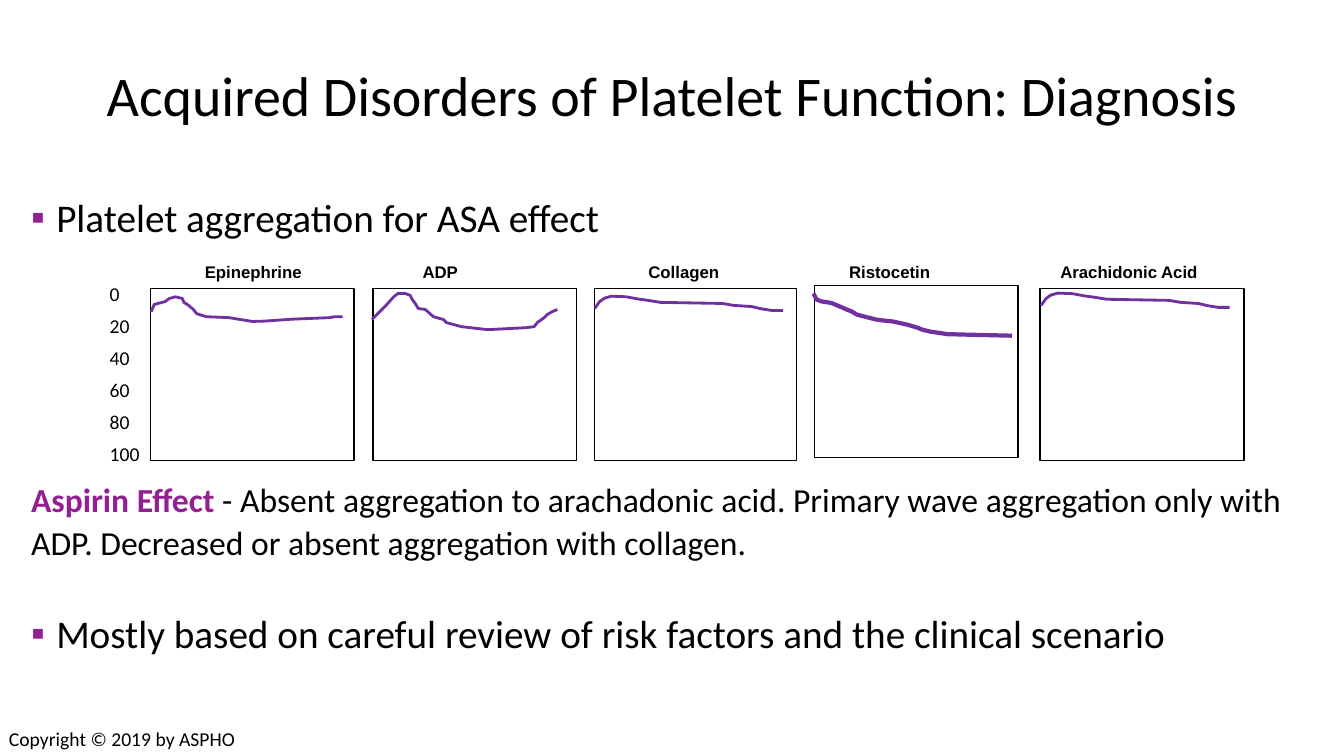
import pptx
import pptx.util
import pptx.dml.color
import pptx.enum.shapes
import pptx.enum.text
from lxml import etree

Pt = pptx.util.Pt
Align = pptx.enum.text.PP_ALIGN
Anchor = pptx.enum.text.MSO_ANCHOR

theme = {
    "black": "000000", "plum": "932092", "trace": "7030A0",
    "title": 40, "point": 28, "note": 24, "small": 14, "label": 12,
    "font": "Calibri", "head": "Arial",
}


def paint(color, name):
    color.rgb = pptx.dml.color.RGBColor.from_string(theme[name])


def write(para, text, size, color="black", bold=False, font="font"):
    run = para.add_run()
    run.text = text
    run.font.size = Pt(theme[size])
    run.font.name = theme[font]
    run.font.bold = bold
    paint(run.font.color, color)


deck = pptx.Presentation()
deck.slide_width, deck.slide_height = Pt(960), Pt(540)
slide = deck.slides.add_slide(deck.slide_layouts[5])
shapes = slide.shapes

# Title
title = shapes.title
title.left, title.top, title.width, title.height = Pt(0), Pt(0), Pt(960), Pt(129.6)
title.text_frame.auto_size = pptx.enum.text.MSO_AUTO_SIZE.NONE
title.text_frame.vertical_anchor = Anchor.MIDDLE
para = title.text_frame.paragraphs[0]
para.alignment = Align.CENTER
para.line_spacing = 1.1
write(para, "Acquired Disorders of Platelet Function: Diagnosis", "title")

# Body: space before, bullet, runs
body = [
    (0, True, [("Platelet aggregation for ASA effect", "point", "black", False)]),
    (168, False, [
        ("Aspirin Effect ", "note", "plum", True),
        ("- Absent aggregation to arachadonic acid. Primary wave aggregation only "
         "with ADP. Decreased or absent aggregation with collagen.",
         "note", "black", False)]),
    (31, True, [("Mostly based on careful review of risk factors and the clinical scenario",
                 "point", "black", False)]),
]
frame = shapes.add_textbox(Pt(15.1), Pt(131.8), Pt(923), Pt(365.8)).text_frame
frame.word_wrap = True
for i, (gap, mark, runs) in enumerate(body):
    para = frame.add_paragraph() if i else frame.paragraphs[0]
    para.line_spacing = 1.08
    para.space_before = Pt(gap)
    if mark:
        props = para._p.get_or_add_pPr()
        props.set("marL", str(Pt(18)))
        props.set("indent", str(Pt(-18)))
        ns = "{http://schemas.openxmlformats.org/drawingml/2006/main}"
        tint = etree.SubElement(props, ns + "buClr")
        etree.SubElement(tint, ns + "srgbClr", val=theme["plum"])
        etree.SubElement(props, ns + "buFont", typeface=theme["head"])
        etree.SubElement(props, ns + "buChar", char="▪")
    for text, size, color, bold in runs:
        write(para, text, size, color, bold)

# Traces, measured from the corner of each panel
epi = [(0.7, 16.6), (2.9, 11.5), (10.8, 9.4), (13.7, 7.2), (18, 6), (23, 7.2),
       (24.1, 10), (26.6, 11.5), (31, 15.1), (33.1, 18), (40, 20.2), (56.2, 20.9),
       (73, 23.6), (81.4, 23.4), (101.5, 22), (128.2, 20.9), (131.8, 20.2),
       (137.5, 20.2)]
adp = [(-0.7, 22.3), (6.5, 15.1), (8.6, 13), (15.1, 5.8), (18, 3.6), (23, 3.7),
       (26.6, 5), (28.1, 7.9), (30.2, 10.8), (32.4, 14.4), (37.4, 15.1),
       (43.2, 20.2), (50.4, 22.3), (52.6, 24.5), (63.4, 27.4), (82.1, 29.5),
       (109.4, 28.1), (115.2, 27.4), (117.4, 24.5), (122.4, 20.9), (124.6, 18.7),
       (128.2, 16.6), (131.8, 15.1)]
flat = [(0, 14.4), (3.6, 9.4), (7, 7), (12, 5.6), (22.3, 6), (31, 7.6),
        (38.2, 8.6), (47, 10), (91.4, 10.8), (99.4, 12.2), (112.3, 13),
        (119, 14.6), (126.7, 15.8), (134.6, 15.8)]
risto = [(-0.7, 5.8), (1.4, 10.1), (5, 11.5), (12, 12.6), (18, 15.1), (23, 17.3),
         (26.6, 18.7), (30.2, 20.9), (38.2, 23), (45, 24.7), (56.2, 25.9),
         (66.2, 28.1), (73.4, 30.2), (77, 31.7), (82.8, 33.1), (95, 34.9),
         (110.2, 35.3), (141.1, 36)]
arach = [(x + 0.7, y - 2.2) for x, y in flat]

# Panels: label, label centre, left, top, width, trace, trace weight
panels = [
    ("Epinephrine", 181, 107.3, 206, 145.5, epi, 2),
    ("ADP", 314.5, 266.4, 206, 145.5, adp, 2),
    ("Collagen", 488.5, 424.8, 206, 144, flat, 2),
    ("Ristocetin", 635.5, 581.8, 203.8, 145.5, risto, 3),
    ("Arachidonic Acid", 806.5, 743, 206, 145.5, arach, 2),
]
for name, mid, left, top, width, trace, weight in panels:
    frame = shapes.add_textbox(Pt(mid - 65), Pt(183.5), Pt(130), Pt(22)).text_frame
    frame.word_wrap = True
    frame.vertical_anchor = Anchor.MIDDLE
    frame.paragraphs[0].alignment = Align.CENTER
    write(frame.paragraphs[0], name, "label", bold=True, font="head")

    rect = pptx.enum.shapes.MSO_SHAPE.RECTANGLE
    panel = shapes.add_shape(rect, Pt(left), Pt(top), Pt(width), Pt(123.1))
    dots = [(Pt(x), Pt(y)) for x, y in trace]
    pen = shapes.build_freeform(*dots[0])
    pen.add_line_segments(dots[1:], close=False)
    curve = pen.convert_to_shape(Pt(left), Pt(top))
    for shape, color, size in ((panel, "black", 1), (curve, "trace", weight)):
        shape.shadow.inherit = False
        shape.fill.background()
        paint(shape.line.color, color)
        shape.line.width = Pt(size)

# Scale
frame = shapes.add_textbox(Pt(71.3), Pt(198), Pt(45.4), Pt(139.7)).text_frame
frame.word_wrap = True
for value in range(0, 101, 20):
    para = frame.add_paragraph() if value else frame.paragraphs[0]
    para.space_after = Pt(6)
    write(para, str(value), "small")

# Footer
frame = shapes.add_textbox(Pt(-0.7), Pt(515.5), Pt(178.6), Pt(24.5)).text_frame
frame.word_wrap = True
write(frame.paragraphs[0], "Copyright © 2019 by ASPHO", "small")

deck.save("out.pptx")
